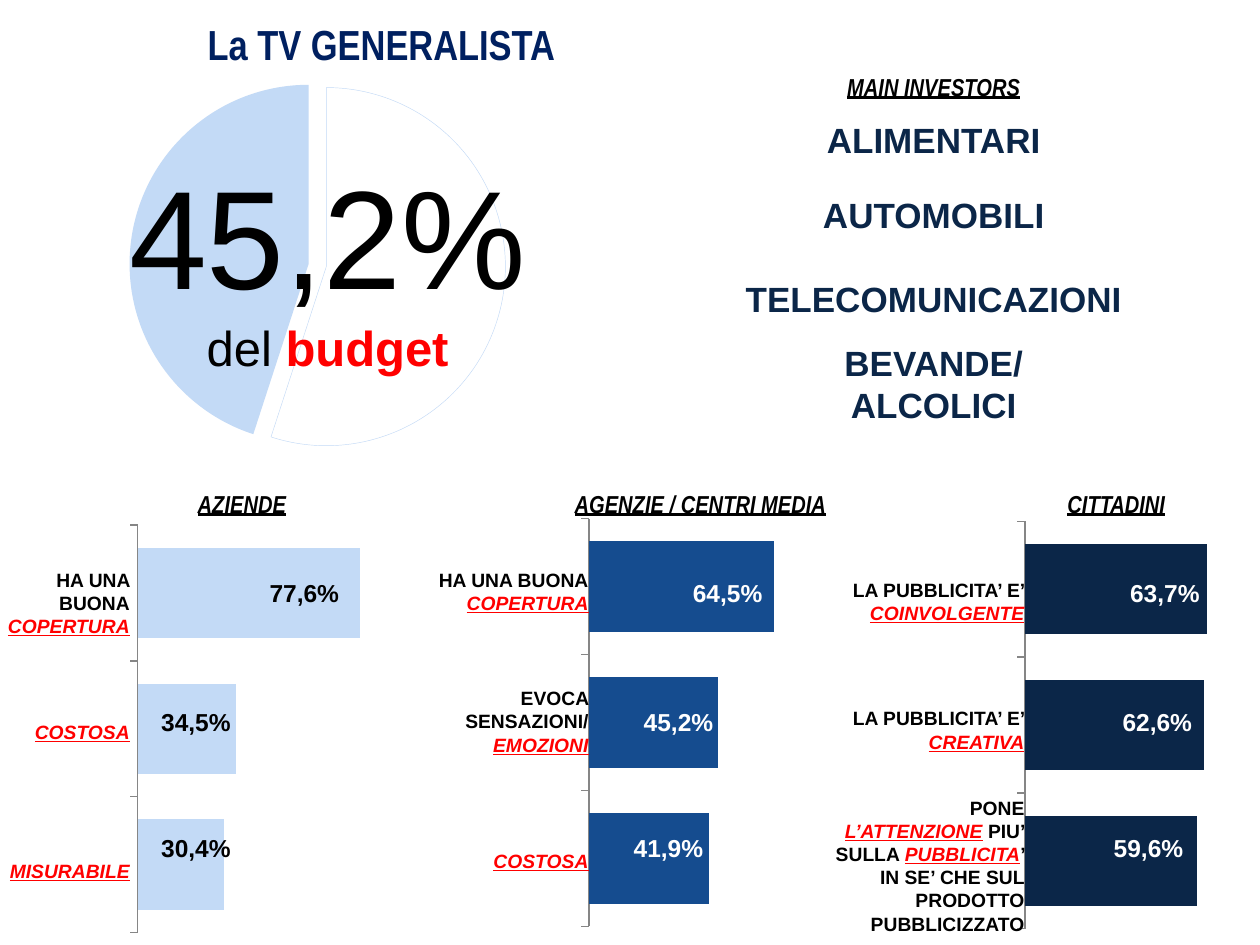
from lxml import etree
from pptx import Presentation
from pptx.chart.data import CategoryChartData
from pptx.dml.color import RGBColor
from pptx.enum import chart as ch, text as tx
from pptx.oxml.ns import qn
from pptx.util import Inches, Pt

BLACK = RGBColor(0x00, 0x00, 0x00)
WHITE = RGBColor(0xFF, 0xFF, 0xFF)
RED = RGBColor(0xFF, 0x00, 0x00)
TITLE_BLUE = RGBColor(0x00, 0x20, 0x60)
NAVY = RGBColor(0x0B, 0x26, 0x48)
BLUE = RGBColor(0x15, 0x4C, 0x8F)
PALE_BLUE = RGBColor(0xC3, 0xDA, 0xF6)
SLATE = RGBColor(0x53, 0x61, 0x6A)
AXIS_GREY = RGBColor(0x86, 0x86, 0x86)

LEFT, CENTER, RIGHT = tx.PP_ALIGN.LEFT, tx.PP_ALIGN.CENTER, tx.PP_ALIGN.RIGHT
VALUE_TOPS = (0.71, 1.73, 2.73)


def run(text, size=11, color=BLACK, bold=True, accent=False, font="Arial"):
    """Describe a run; accent means italic and underlined."""
    return text, size, color, bold, accent, font


def key(text):
    return run(text, color=RED, accent=True)


def add_text(slide, left, top, width, height, paragraphs, align=CENTER):
    """Place paragraphs, each a list of runs; a newline in a run breaks the line."""
    box = slide.shapes.add_textbox(*map(Inches, (left, top, width, height)))
    frame = box.text_frame
    frame.word_wrap = True
    for index, runs in enumerate(paragraphs):
        paragraph = frame.add_paragraph() if index else frame.paragraphs[0]
        paragraph.alignment = align
        for text, size, color, bold, accent, font in runs:
            for line_number, line in enumerate(text.split("\n")):
                if line_number:
                    paragraph.add_line_break()
                if not line:
                    continue
                piece = paragraph.add_run()
                piece.text = line
                piece.font.size = Pt(size)
                piece.font.name = font
                piece.font.color.rgb = color
                piece.font.bold = bold
                piece.font.italic = piece.font.underline = accent


def add_heading(slide, left, top, text):
    heading = run(text, 14, accent=True, font="Arial Narrow")
    add_text(slide, left, top, 3.78, 0.34, [[heading]])


def add_chart(slide, kind, box, values, plot_width, plot_height):
    """Add a one-series chart with its plot centred at the given fractions."""
    data = CategoryChartData()
    data.categories = [str(n + 1) for n in range(len(values))]
    data.add_series("Series 1", values)
    chart = slide.shapes.add_chart(kind, *map(Inches, box), data).chart
    chart.has_legend = chart.has_title = False
    chart.font.size = Pt(18)
    chart.font.name = "Arial"
    chart.font.color.rgb = SLATE

    plot_area = chart.plots[0]._element.getparent()
    for old in plot_area.findall(qn("c:layout")):
        plot_area.remove(old)
    layout = etree.Element(qn("c:layout"))
    manual = etree.SubElement(layout, qn("c:manualLayout"))
    settings = (("layoutTarget", "inner"), ("xMode", "edge"), ("yMode", "edge"),
                ("x", (1 - plot_width) / 2), ("y", (1 - plot_height) / 2),
                ("w", plot_width), ("h", plot_height))
    for tag, value in settings:
        etree.SubElement(manual, qn("c:" + tag)).set("val", str(value))
    plot_area.insert(0, layout)
    return chart


def add_bars(slide, left, top, values, maximum, color):
    chart = add_chart(slide, ch.XL_CHART_TYPE.BAR_CLUSTERED,
                      (left, top, 2.4, 3.37), values, 0.95, 0.96)
    plot = chart.plots[0]
    plot.gap_width = 50
    plot.vary_by_categories = False
    fill = plot.series[0].format.fill
    fill.solid()
    fill.fore_color.rgb = color

    for axis in (chart.category_axis, chart.value_axis):
        axis.has_major_gridlines = False
        axis.tick_label_position = ch.XL_TICK_LABEL_POSITION.NONE
        axis.major_tick_mark = ch.XL_TICK_MARK.OUTSIDE
    chart.category_axis.reverse_order = True
    chart.category_axis.format.line.color.rgb = AXIS_GREY
    chart.value_axis.minimum_scale = 0
    chart.value_axis.maximum_scale = maximum
    chart.value_axis.format.line.fill.background()


def add_audience(slide, left, top, heading, heading_shift, bars, value_color,
                 label_width, label_overlap, rows):
    """Bar panel whose left edge is the chart's; labels end just past that edge."""
    chart_top, values, maximum, color = bars
    add_heading(slide, left + heading_shift, top, heading)
    add_bars(slide, left, top + chart_top, values, maximum, color)
    for value_top, (label_top, label, value_left, value) in zip(VALUE_TOPS, rows):
        add_text(slide, left + label_overlap - label_width, top + label_top,
                 label_width, 0.29, [label], RIGHT)
        add_text(slide, left + value_left, top + value_top, 0.84, 0.34,
                 [[run(value, 14, value_color)]], RIGHT)


def add_budget(slide, left, top):
    chart = add_chart(slide, ch.XL_CHART_TYPE.PIE,
                      (left, top, 4.82, 3.31), (55, 45), 0.59, 0.86)
    plot = chart.plots[0]
    plot.vary_by_categories = False
    others, television = (plot.series[0].points[n] for n in range(2))
    others.format.fill.background()
    others.format.line.color.rgb = PALE_BLUE
    others.format.line.width = Pt(0.25)
    television.format.fill.solid()
    television.format.fill.fore_color.rgb = PALE_BLUE
    television.format.line.fill.background()
    slice_xml = plot.series[0]._element.find(qn("c:dPt"))
    explosion = etree.Element(qn("c:explosion"))
    explosion.set("val", "10")
    slice_xml.find(qn("c:spPr")).addprevious(explosion)

    add_text(slide, left + 0.4, top + 0.7, 4.32, 1.92, [
        [run("45,2%", 80, bold=False)],
        [run("del ", 28, bold=False), run("budget", 28, RED)]])


def add_investors(slide, left, top):
    add_heading(slide, left + 0.27, top, "MAIN INVESTORS")
    sectors = (("ALIMENTARI", 0.37), ("AUTOMOBILI", 0.97),
               ("TELECOMUNICAZIONI", 1.63), ("BEVANDE/\nALCOLICI", 2.14))
    for sector, offset in sectors:
        add_text(slide, left, top + offset, 4.32, 0.44, [[run(sector, 20, NAVY)]])


def main():
    prs = Presentation()
    prs.slide_width, prs.slide_height = Inches(10), Inches(7.5)
    slide = prs.slides.add_slide(prs.slide_layouts[6])

    add_text(slide, 1.55, 0.1, 7.57, 0.5,
             [[run("La TV GENERALISTA", 24, TITLE_BLUE, font="Arial Narrow")]], LEFT)
    add_budget(slide, 0.04, 0.44)
    add_investors(slide, 5.25, 0.52)

    coverage = [run("HA UNA BUONA\n"), key("COPERTURA")]
    advertising = run("LA PUBBLICITA’ E’ ")
    add_audience(slide, 1.03, 3.83, "AZIENDE", -1.0,
                 (0.27, (100, 44, 39), 129, PALE_BLUE), BLACK, 1.3, 0.1, [
                     (0.63, coverage, 0.92, "77,6%"),
                     (1.84, [key("COSTOSA")], 0.06, "34,5%"),
                     (2.94, [key("MISURABILE")], 0.06, "30,4%")])
    add_audience(slide, 4.61, 3.83, "AGENZIE / CENTRI MEDIA", -0.94,
                 (0.22, (100, 70, 65), 155, BLUE), WHITE, 1.55, 0.16, [
                     (0.63, coverage, 0.7, "64,5%"),
                     (1.57, [run("EVOCA SENSAZIONI/ "), key("EMOZIONI")],
                      0.31, "45,2%"),
                     (2.86, [key("COSTOSA")], 0.23, "41,9%")])
    add_audience(slide, 8.07, 3.83, "CITTADINI", -1.1,
                 (0.24, (100, 98, 94), 157, NAVY), WHITE, 1.73, 0.16, [
                     (0.71, [advertising, key("COINVOLGENTE")], 0.71, "63,7%"),
                     (1.73, [advertising, key("CREATIVA")], 0.65, "62,6%"),
                     (2.44, [run("PONE "), key("L’ATTENZIONE"),
                             run(" PIU’ SULLA "), key("PUBBLICITA"),
                             run("’ IN SE’ CHE SUL PRODOTTO PUBBLICIZZATO")],
                      0.58, "59,6%")])
    prs.save("out.pptx")


if __name__ == "__main__":
    main()
